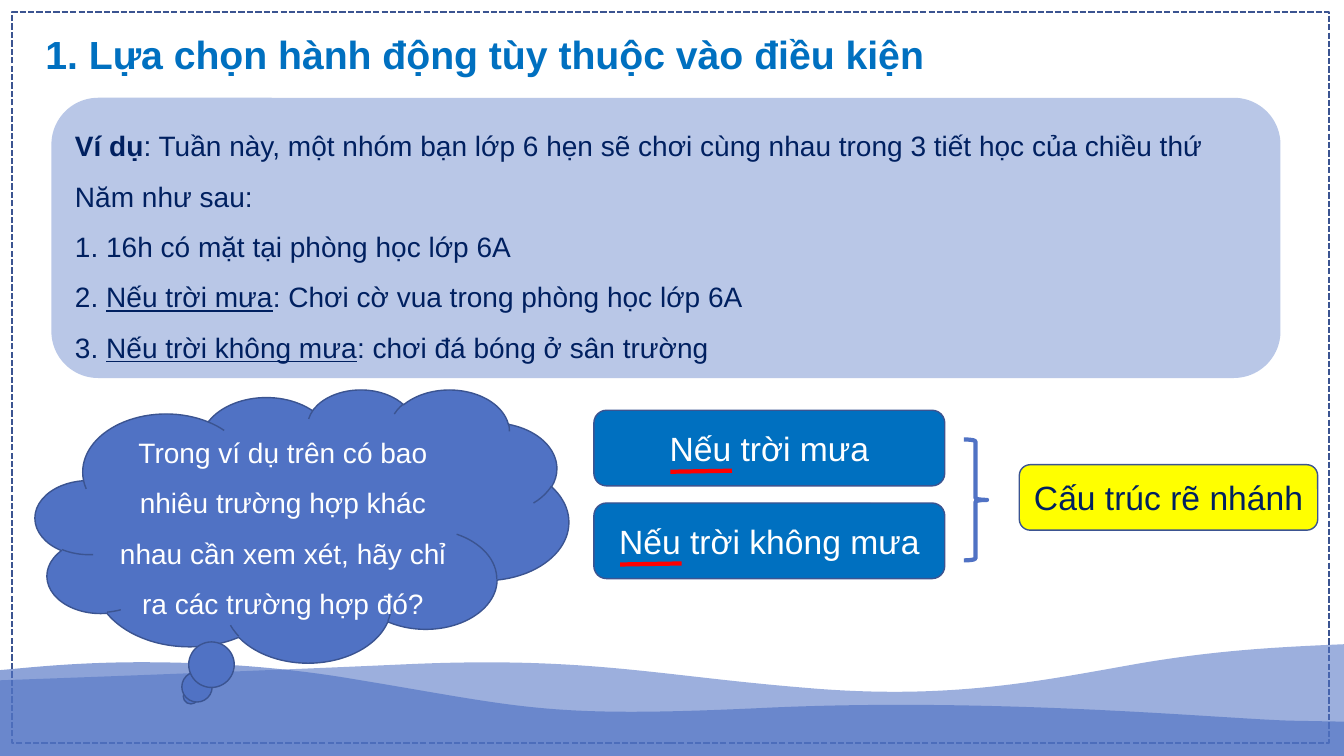
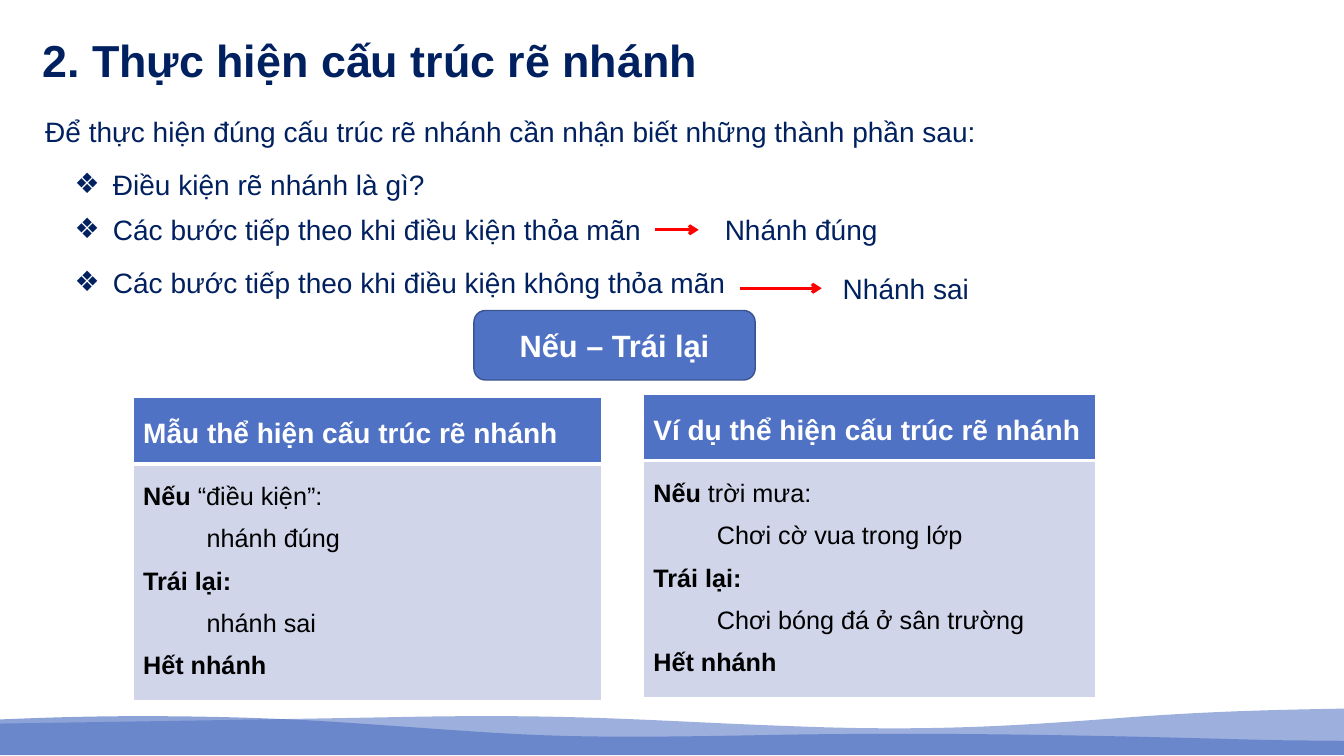
from lxml import etree
from pptx import Presentation
from pptx.dml.color import RGBColor
from pptx.enum import dml, shapes, text
from pptx.oxml import ns
from pptx.util import Inches, Pt

WHITE = RGBColor(0xFF, 0xFF, 0xFF)
BLACK = RGBColor(0, 0, 0)
NAVY = RGBColor(0x00, 0x20, 0x60)
BLUE = RGBColor(0x00, 0x70, 0xC0)
INDIGO = RGBColor(0x50, 0x72, 0xC4)
OUTLINE = RGBColor(0x3B, 0x54, 0x91)
PALE_BLUE = RGBColor(0xB9, 0xC7, 0xE7)
PALE_GREY = RGBColor(0xD0, 0xD5, 0xEA)
RED = RGBColor(0xFF, 0, 0)
YELLOW = RGBColor(0xFF, 0xFF, 0)

FONT = "Arial"
SLIDE_WIDTH, SLIDE_HEIGHT = 13.33, 7.5
WAVE_LEFT, WAVE_RIGHT, WAVE_DEPTH = -0.03, 13.35, 1.11
BACK_WAVE = (
    (WAVE_RIGHT, 0),
    [
        (12.65, 0.03), (12.08, 0.06), (11.31, 0.19),
        (10.29, 0.37), (9.4, 0.56), (7.95, 0.43),
        (6.5, 0.31), (5.81, 0.12), (4.03, 0.2),
        (2.7, 0.26), (0.83, 0.33), (WAVE_LEFT, 0.36),
    ],
    56,
)
FRONT_WAVE = (
    (WAVE_RIGHT, 0.77),
    [
        (13.32, 0.77), (13.35, 0.77), (12.8, 0.76),
        (12.11, 0.74), (9.93, 0.53), (7.65, 0.63),
        (5.36, 0.74), (5.24, 0.63), (3.4, 0.33),
        (2.65, 0.21), (1.96, 0.18), (1.4, 0.18),
        (0.67, 0.18), (0.15, 0.25), (WAVE_LEFT, 0.26),
    ],
    65,
)


def box(left, top, width, height):
    return [Inches(value) for value in (left, top, width, height)]


def write(paragraph, content, size, color, bold=False, align=None, spacing=None):
    runs = [(content, "")] if isinstance(content, str) else content
    for words, style in runs:
        run = paragraph.add_run()
        run.text = words
        if style == "bold":
            run.font.bold = True
        elif style == "underline":
            run.font.underline = True
    font = paragraph.font
    font.name, font.size, font.bold = FONT, Pt(size), bold
    font.color.rgb = color
    if align is not None:
        paragraph.alignment = align
    if spacing:
        paragraph.line_spacing = spacing


def write_lines(frame, lines, *args, **options):
    for index, line in enumerate(lines):
        paragraph = frame.add_paragraph() if index else frame.paragraphs[0]
        write(paragraph, line, *args, **options)


def place_placeholder(holder, area):
    holder.left, holder.top, holder.width, holder.height = area
    frame = holder.text_frame
    frame.auto_size = text.MSO_AUTO_SIZE.NONE
    frame.word_wrap = True
    return frame


def add_title(slide, area, words, size, color, spacing=None):
    frame = place_placeholder(slide.shapes.title, area)
    frame.vertical_anchor = text.MSO_ANCHOR.MIDDLE
    write(frame.paragraphs[0], words, size, color, bold=True,
          align=text.PP_ALIGN.LEFT, spacing=spacing)


def add_panel(slide, kind, area, fill=None, line=None, width=1):
    panel = slide.shapes.add_shape(kind, *area)
    panel.shadow.inherit = False
    if fill is None:
        panel.fill.background()
    else:
        panel.fill.solid()
        panel.fill.fore_color.rgb = fill
    if line is None:
        panel.line.fill.background()
    else:
        panel.line.color.rgb = line
        panel.line.width = Pt(width)
    panel.text_frame.word_wrap = True
    panel.text_frame.vertical_anchor = text.MSO_ANCHOR.MIDDLE
    return panel


def add_label(slide, area, words, size, fill, color=WHITE, bold=False):
    label = add_panel(slide, shapes.MSO_SHAPE.ROUNDED_RECTANGLE, area, fill, OUTLINE)
    write(label.text_frame.paragraphs[0], words, size, color, bold,
          text.PP_ALIGN.CENTER)


def add_note(slide, area, words):
    note = slide.shapes.add_textbox(*area)
    note.text_frame.word_wrap = True
    write(note.text_frame.paragraphs[0], words, 20, NAVY)


def add_red_line(slide, start, end, width, arrow=False):
    ends = [Inches(value) for value in (*start, *end)]
    line = slide.shapes.add_connector(shapes.MSO_CONNECTOR.STRAIGHT, *ends)
    line.line.color.rgb = RED
    line.line.width = Pt(width)
    if arrow:
        etree.SubElement(line.line._get_or_add_ln(), ns.qn("a:tailEnd"), type="arrow")
    etree.SubElement(line._element.spPr, ns.qn("a:effectLst"))


def bend_segments(outline, count):
    segments = outline.findall(".//" + ns.qn("a:lnTo"))[:count]
    for index in range(0, count, 3):
        first, *others = segments[index:index + 3]
        curve = etree.Element(ns.qn("a:cubicBezTo"))
        first.addprevious(curve)
        for segment in (first, *others):
            curve.append(segment[0])
            segment.getparent().remove(segment)


def add_waves(slide, top, depth):
    def scaled(point):
        return Inches(point[0]), Inches(top + point[1] * depth / WAVE_DEPTH)

    for start, curve, opacity in (BACK_WAVE, FRONT_WAVE):
        outline = slide.shapes.build_freeform(*scaled(start))
        corners = [(WAVE_LEFT, WAVE_DEPTH), (WAVE_RIGHT, WAVE_DEPTH)]
        outline.add_line_segments([scaled(point) for point in curve + corners],
                                  close=True)
        wave = outline.convert_to_shape()
        bend_segments(wave._element, len(curve))
        wave.shadow.inherit = False
        wave.fill.solid()
        wave.fill.fore_color.rgb = INDIGO
        wave.line.fill.background()
        tint = wave._element.spPr.find(".//" + ns.qn("a:srgbClr"))
        etree.SubElement(tint, ns.qn("a:alpha"), val=str(opacity * 1000))


def add_example(slide, area):
    example = add_panel(slide, shapes.MSO_SHAPE.ROUNDED_RECTANGLE, area, PALE_BLUE)
    lines = [
        [("Ví dụ", "bold"),
         (": Tuần này, một nhóm bạn lớp 6 hẹn sẽ chơi cùng nhau trong 3 tiết học "
          "của chiều thứ Năm như sau:", "")],
        "1. 16h có mặt tại phòng học lớp 6A",
        [("2. ", ""), ("Nếu trời mưa", "underline"),
         (": Chơi cờ vua trong phòng học lớp 6A", "")],
        [("3. ", ""), ("Nếu trời không mưa", "underline"),
         (": chơi đá bóng ở sân trường", "")],
    ]
    write_lines(example.text_frame, lines, 20, NAVY,
                align=text.PP_ALIGN.LEFT, spacing=1.5)


def add_question(slide, area):
    cloud = add_panel(slide, shapes.MSO_SHAPE.CLOUD_CALLOUT, area, INDIGO, OUTLINE)
    write(cloud.text_frame.paragraphs[0],
          "Trong ví dụ trên có bao nhiêu trường hợp khác nhau cần xem xét, "
          "hãy chỉ ra các trường hợp đó?",
          20, WHITE, align=text.PP_ALIGN.CENTER, spacing=1.5)


def add_cases(slide, left, top):
    cases = (("Nếu trời mưa", 0.76), ("Nếu trời không mưa", 0.26))
    for row, (case, underline_left) in enumerate(cases):
        case_top = top + row * 0.92
        add_label(slide, box(left, case_top, 3.48, 0.75), case, 24, BLUE)
        x, y = left + underline_left, case_top + 0.61
        add_red_line(slide, (x, y), (x + 0.61, y - 0.01), 3)
    add_panel(slide, shapes.MSO_SHAPE.RIGHT_BRACE,
              box(left + 3.67, top + 0.29, 0.23, 1.2), line=INDIGO, width=3)
    add_label(slide, box(left + 4.22, top + 0.54, 2.96, 0.65),
              "Cấu trúc rẽ nhánh", 24, YELLOW, NAVY)


def add_components(slide, left, top):
    add_note(slide, box(left, top, 9.5, 0.44),
             "Để thực hiện đúng cấu trúc rẽ nhánh cần nhận biết những thành phần sau:")
    frame = place_placeholder(slide.placeholders[1],
                              box(left + 0.29, top + 0.52, 6.8, 1.42))
    steps = (
        "Điều kiện rẽ nhánh là gì?",
        "Các bước tiếp theo khi điều kiện thỏa mãn",
        "Các bước tiếp theo khi điều kiện không thỏa mãn",
    )
    write_lines(frame, steps, 20, NAVY)
    for paragraph, gap in zip(frame.paragraphs, (0, 8, 14)):
        paragraph.space_before = Pt(gap)
        properties = paragraph._p.get_or_add_pPr()
        properties.set("marL", str(Inches(0.38)))
        properties.set("indent", str(-Inches(0.38)))
        bullet = etree.Element(ns.qn("a:buChar"), char="❖")
        properties.find(ns.qn("a:defRPr")).addprevious(bullet)
    branches = (
        ("Nhánh đúng", 6.15, 1.19, 0.43, 6.74, 0.97, 1.73),
        ("Nhánh sai", 6.99, 1.77, 0.81, 7.91, 1.55, 1.47),
    )
    for branch, arrow_x, arrow_y, length, note_x, note_y, width in branches:
        y = top + arrow_y
        add_red_line(slide, (left + arrow_x, y), (left + arrow_x + length, y),
                     2.25, arrow=True)
        add_note(slide, box(left + note_x, top + note_y, width, 0.44), branch)


def add_border(cell, side):
    border = etree.Element(ns.qn(side), w=str(Pt(3)))
    fill = etree.SubElement(border, ns.qn("a:solidFill"))
    etree.SubElement(fill, ns.qn("a:srgbClr"), val=str(WHITE))
    cell._tc.get_or_add_tcPr().insert(0, border)


def add_branch_table(slide, left, top, width, heading, condition, met, otherwise):
    table = slide.shapes.add_table(2, 1, *box(left, top, width, 2.99)).table
    table.horz_banding = False
    table.columns[0].width = Inches(width)
    lines = [
        [("Nếu", "bold"), (" " + condition, "")],
        met,
        [("Trái lại:", "bold")],
        otherwise,
        [("Hết nhánh", "bold")],
    ]
    rows = (
        ([heading], 0.66, INDIGO, 20, WHITE, True, "a:lnB"),
        (lines, 2.33, PALE_GREY, 18, BLACK, False, "a:lnT"),
    )
    for index, (content, height, fill, size, color, bold, side) in enumerate(rows):
        table.rows[index].height = Inches(height)
        cell = table.cell(index, 0)
        cell.fill.solid()
        cell.fill.fore_color.rgb = fill
        add_border(cell, side)
        write_lines(cell.text_frame, content, size, color, bold, spacing=1.5)
    for index in (1, 3):
        indented = table.cell(1, 0).text_frame.paragraphs[index]
        indented._p.get_or_add_pPr().set("marL", str(Inches(0.63)))


def build_choice_slide(deck):
    slide = deck.slides.add_slide(deck.slide_layouts[5])
    frame = add_panel(slide, shapes.MSO_SHAPE.RECTANGLE,
                      box(0.12, 0.12, 13.06, 7.25), line=OUTLINE, width=1.5)
    frame.line.dash_style = dml.MSO_LINE.SQUARE_DOT
    add_title(slide, box(0.35, 0.25, 9.03, 0.57),
              "1. Lựa chọn hành động tùy thuộc vào điều kiện", 28, BLUE)
    add_example(slide, box(0.51, 0.97, 12.19, 2.78))
    add_waves(slide, 6.39, WAVE_DEPTH)
    add_question(slide, box(0.35, 3.86, 5.29, 2.71))
    add_cases(slide, 5.89, 4.07)


def build_branch_slide(deck):
    slide = deck.slides.add_slide(deck.slide_layouts[1])
    add_title(slide, box(0.32, 0.23, 12.66, 0.79),
              "2. Thực hiện cấu trúc rẽ nhánh", 32, NAVY, spacing=0.9)
    add_components(slide, 0.35, 1.09)
    add_label(slide, box(4.7, 3.08, 2.79, 0.69), "Nếu – Trái lại", 22, INDIGO, bold=True)
    add_branch_table(slide, 1.32, 3.94, 4.65, "Mẫu thể hiện cấu trúc rẽ nhánh",
                     "“điều kiện”:", "nhánh đúng", "nhánh sai")
    add_branch_table(slide, 6.38, 3.91, 4.49, "Ví dụ thể hiện cấu trúc rẽ nhánh",
                     "trời mưa:", "Chơi cờ vua trong lớp", "Chơi bóng đá ở sân trường")
    add_waves(slide, 7.03, 0.46)


def main():
    deck = Presentation()
    deck.slide_width = Inches(SLIDE_WIDTH)
    deck.slide_height = Inches(SLIDE_HEIGHT)
    build_choice_slide(deck)
    build_branch_slide(deck)
    deck.save("out.pptx")


if __name__ == "__main__":
    main()
